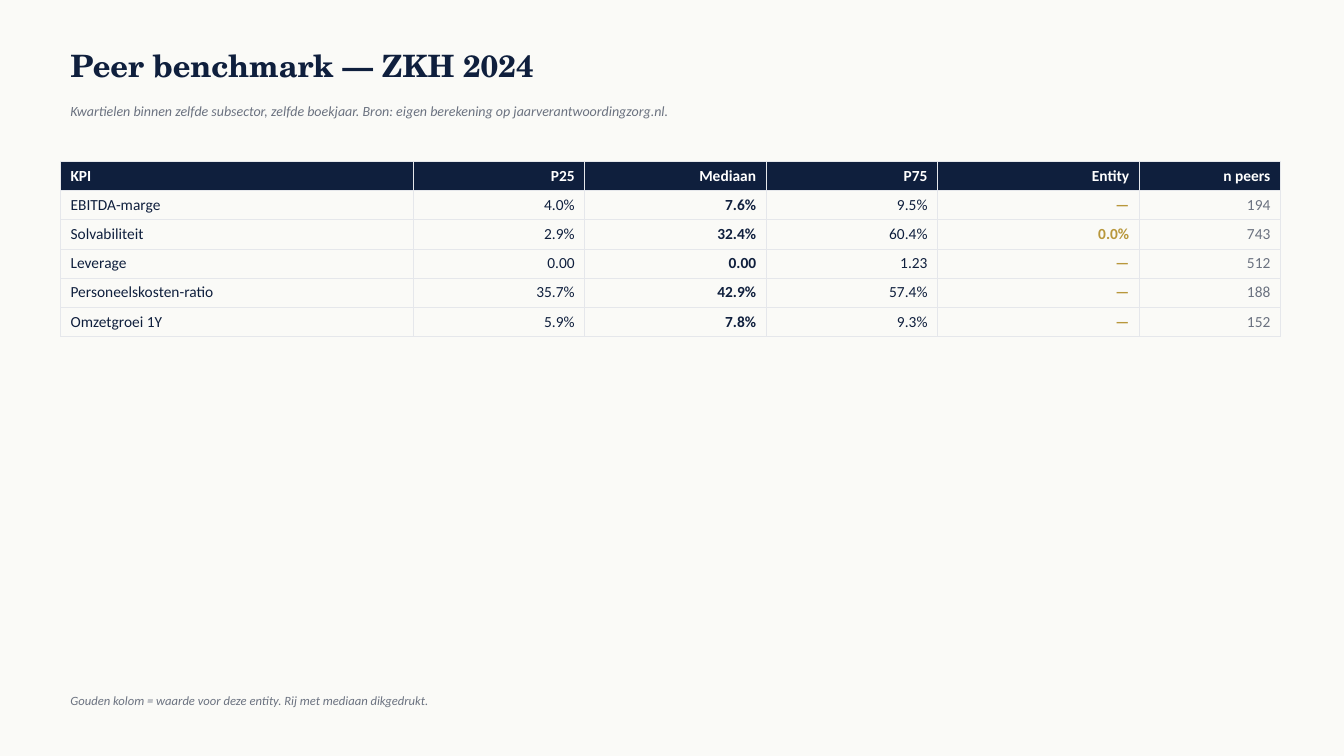
from lxml.etree import SubElement
from pptx import Presentation
from pptx.dml.color import RGBColor
from pptx.enum.text import MSO_ANCHOR as Anchor, PP_ALIGN as Align
from pptx.oxml.ns import qn
from pptx.util import Inches, Pt

NAVY = RGBColor(0x0F, 0x1F, 0x3D)
GOLD = RGBColor(0xB8, 0x97, 0x3B)
GREY = RGBColor(0x6B, 0x72, 0x80)
WHITE = RGBColor(0xFF, 0xFF, 0xFF)
CREAM = RGBColor(0xFA, 0xFA, 0xF7)
BORDER = RGBColor(0xE5, 0xE7, 0xEB)

HEADINGS = ["KPI", "P25", "Mediaan", "P75", "Entity", "n peers"]
WIDTHS = [3.5, 1.7, 1.8, 1.7, 2, 1.4]
COLOURS = [NAVY, NAVY, NAVY, NAVY, GOLD, GREY]
BOLD_COLUMNS = {"Mediaan", "Entity"}
ROW_HEIGHT = 0.29
BENCHMARKS = [
    ["EBITDA-marge", "4.0%", "7.6%", "9.5%", "—", "194"],
    ["Solvabiliteit", "2.9%", "32.4%", "60.4%", "0.0%", "743"],
    ["Leverage", "0.00", "0.00", "1.23", "—", "512"],
    ["Personeelskosten-ratio", "35.7%", "42.9%", "57.4%", "—", "188"],
    ["Omzetgroei 1Y", "5.9%", "7.8%", "9.3%", "—", "152"],
]


def add_span(para, text, size, colour, bold=False, italic=False, font="Calibri"):
    """Add one formatted run to a paragraph."""
    span = para.add_run()
    span.text = text
    span.font.name = font
    span.font.size = Pt(size)
    span.font.bold = bold
    span.font.italic = italic
    span.font.color.rgb = colour


def add_text(page, top, height, text, size, colour, **style):
    """Add a full-width line of text, centred vertically in its box."""
    box = page.shapes.add_textbox(Inches(0.6), Inches(top), Inches(12), Inches(height))
    frame = box.text_frame
    frame.word_wrap = True
    frame.vertical_anchor = Anchor.MIDDLE
    add_span(frame.paragraphs[0], text, size, colour, **style)


def add_borders(cell):
    """Draw a thin line on all four sides of a cell."""
    properties = cell._tc.get_or_add_tcPr()
    for side in ("a:lnL", "a:lnR", "a:lnT", "a:lnB"):
        line = SubElement(properties, qn(side), w=str(Pt(0.5)))
        fill = SubElement(line, qn("a:solidFill"))
        SubElement(fill, qn("a:srgbClr"), val=str(BORDER))


def fill_cell(cell, text, column, header):
    """Write and format one table cell according to its column."""
    add_borders(cell)
    if header:
        cell.fill.solid()
        cell.fill.fore_color.rgb = NAVY
    else:
        cell.fill.background()
    para = cell.text_frame.paragraphs[0]
    para.alignment = Align.RIGHT if column else Align.LEFT
    colour = WHITE if header else COLOURS[column]
    add_span(para, text, 11, colour, bold=header or HEADINGS[column] in BOLD_COLUMNS)


def add_benchmark_table(page):
    """Add the table of quartiles per KPI."""
    rows = [HEADINGS, *BENCHMARKS]
    table = page.shapes.add_table(
        len(rows), len(HEADINGS), Inches(0.6), Inches(1.6),
        Inches(sum(WIDTHS)), Inches(ROW_HEIGHT * len(rows)),
    ).table
    table.horz_banding = False
    for column, width in zip(table.columns, WIDTHS):
        column.width = Inches(width)
    for row, values in enumerate(rows):
        table.rows[row].height = Inches(ROW_HEIGHT)
        for column, text in enumerate(values):
            fill_cell(table.cell(row, column), text, column, header=row == 0)


def main():
    """Build and save the peer benchmark slide."""
    deck = Presentation()
    deck.slide_width = Inches(13.33)
    deck.slide_height = Inches(7.5)
    page = deck.slides.add_slide(deck.slide_layouts[6])
    page.background.fill.solid()
    page.background.fill.fore_color.rgb = CREAM
    add_text(page, 0.4, 0.5, "Peer benchmark — ZKH 2024", 22, NAVY,
             bold=True, font="TeX Gyre Schola")
    add_text(page, 0.95, 0.3, "Kwartielen binnen zelfde subsector, zelfde boekjaar. "
             "Bron: eigen berekening op jaarverantwoordingzorg.nl.", 10, GREY, italic=True)
    add_benchmark_table(page)
    add_text(page, 6.8, 0.3, "Gouden kolom = waarde voor deze entity. "
             "Rij met mediaan dikgedrukt.", 9, GREY, italic=True)
    deck.save("out.pptx")


if __name__ == "__main__":
    main()
